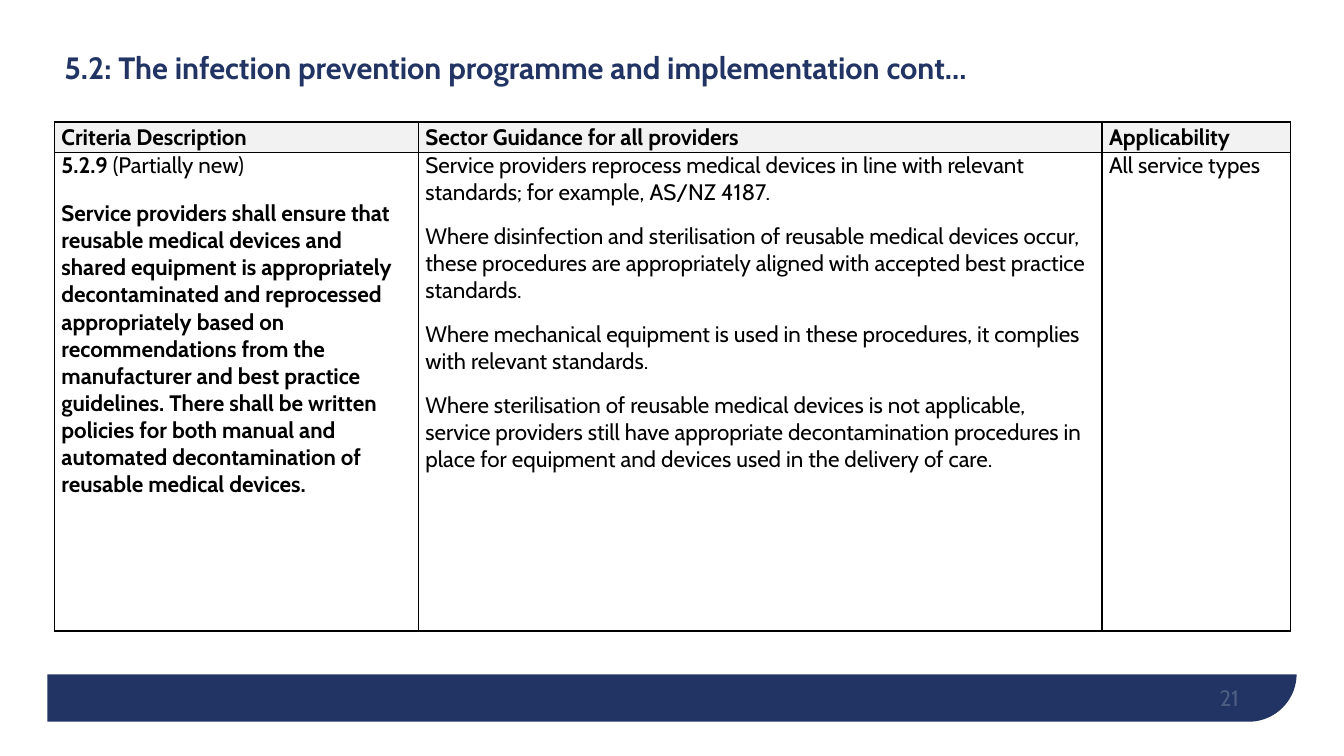
from dataclasses import dataclass

from lxml import etree
from pptx import Presentation
from pptx.dml.color import RGBColor
from pptx.enum.shapes import MSO_SHAPE
from pptx.enum.text import MSO_ANCHOR, PP_ALIGN
from pptx.oxml.ns import qn
from pptx.util import Pt

EMU_PER_PX = 9144  # 100 px to the inch
ROUND_CORNER = MSO_SHAPE.ROUND_1_RECTANGLE
RECTANGLE = MSO_SHAPE.RECTANGLE
TOP, MIDDLE, BOTTOM = MSO_ANCHOR.TOP, MSO_ANCHOR.MIDDLE, MSO_ANCHOR.BOTTOM
LEFT, RIGHT = PP_ALIGN.LEFT, PP_ALIGN.RIGHT


@dataclass(frozen=True)
class Theme:
    font: str = "Cabin"
    navy: str = "213463"
    white: str = "FFFFFF"
    black: str = "000000"
    header_fill: str = "F2F2F2"
    title_size: int = 22
    body_size: int = 16
    border_width: int = 1


@dataclass(frozen=True)
class Box:
    left: int
    top: int
    width: int
    height: int

    def emu(self) -> list[int]:
        return [px(n) for n in (self.left, self.top, self.width, self.height)]


@dataclass(frozen=True)
class Run:
    text: str
    bold: bool = False


@dataclass(frozen=True)
class Column:
    heading: str
    width: int
    paragraphs: list[list[Run]]
    space_after: int = 6


THEME = Theme()
TABLE = Box(54, 121, 1226, 505)
HEADER_HEIGHT = 30
CELL_INSET = 7
SPACE_BEFORE = 6

COLUMNS = [
    Column("Criteria Description", 361, [
        [Run("5.2.9 ", True), Run("(Partially new)")],
        [Run("Service providers shall ensure that reusable medical devices and shared "
             "equipment is appropriately decontaminated and reprocessed appropriately "
             "based on recommendations from the manufacturer and best practice "
             "guidelines. There shall be written policies for both manual and automated "
             "decontamination of reusable medical devices.", True)],
    ], space_after=9),
    Column("Sector Guidance for all providers", 678, [
        [Run("Service providers reprocess medical devices in line with relevant "
             "standards; for example, AS/NZ 4187.")],
        [Run("Where disinfection and sterilisation of reusable medical devices occur, "
             "these procedures are appropriately aligned with accepted best practice "
             "standards.")],
        [Run("Where mechanical equipment is used in these procedures, it complies with "
             "relevant standards.")],
        [Run("Where sterilisation of reusable medical devices is not applicable, service "
             "providers still have appropriate decontamination procedures in place for "
             "equipment and devices used in the delivery of care.")],
    ]),
    Column("Applicability", 187, [[Run("All service types")]]),
]


def px(length: int) -> int:
    return length * EMU_PER_PX


def set_font(font, size: int, color: str) -> None:
    font.name = THEME.font
    font.size = Pt(size)
    font.color.rgb = RGBColor.from_string(color)


def add_panel(slide, preset, box: Box, color: str):
    panel = slide.shapes.add_shape(preset, *box.emu())
    panel.shadow.inherit = False
    panel.fill.solid()
    panel.fill.fore_color.rgb = RGBColor.from_string(color)
    panel.line.fill.background()
    return panel


def add_footer_band(slide) -> None:
    """Navy sheet with a rounded lower right corner, white above the band."""
    sheet = add_panel(slide, ROUND_CORNER, Box(47, 37, 1239, 679), THEME.navy)
    sheet.adjustments[0] = 0.07
    sheet.rotation = 180
    sheet._element.spPr.find(qn("a:xfrm")).set("flipH", "1")
    add_panel(slide, RECTANGLE, Box(0, 0, 1333, 669), THEME.white)


def add_label(slide, box: Box, text: str, size: int, color: str, anchor, align):
    """Add a one-paragraph text box and return its text frame."""
    frame = slide.shapes.add_textbox(*box.emu()).text_frame
    frame.word_wrap = True
    frame.vertical_anchor = anchor
    paragraph = frame.paragraphs[0]
    paragraph.text = text
    paragraph.alignment = align
    set_font(paragraph.font, size, color)
    return frame


def add_title(slide) -> None:
    frame = add_label(slide, Box(54, 21, 1025, 95),
                      "5.2: The infection prevention programme and implementation cont…",
                      THEME.title_size, THEME.navy, MIDDLE, LEFT)
    frame.paragraphs[0].font.bold = True
    frame.paragraphs[0].line_spacing = 0.9


def add_page_number(slide) -> None:
    frame = add_label(slide, Box(929, 665, 300, 40), "21",
                      THEME.body_size, THEME.white, BOTTOM, RIGHT)
    frame.margin_left = frame.margin_right = frame.margin_top = frame.margin_bottom = 0
    for color in frame.paragraphs[0]._p.iter(qn("a:srgbClr")):
        etree.SubElement(color, qn("a:alpha"), val="20000")


def add_borders(cell) -> None:
    properties = cell._tc.get_or_add_tcPr()
    for side in ("lnL", "lnR", "lnT", "lnB"):
        line = etree.SubElement(properties, qn(f"a:{side}"), w=str(Pt(THEME.border_width)))
        fill = etree.SubElement(line, qn("a:solidFill"))
        etree.SubElement(fill, qn("a:srgbClr"), val=THEME.black)


def fill_cell(cell, paragraphs: list[list[Run]], anchor, space_after: int) -> None:
    cell.margin_left = cell.margin_right = px(CELL_INSET)
    cell.margin_top = cell.margin_bottom = 0
    cell.vertical_anchor = anchor
    add_borders(cell)
    frame = cell.text_frame
    for index, runs in enumerate(paragraphs):
        paragraph = frame.add_paragraph() if index else frame.paragraphs[0]
        if index:
            paragraph.space_before = Pt(SPACE_BEFORE)
        if index < len(paragraphs) - 1:
            paragraph.space_after = Pt(space_after)
        set_font(paragraph.font, THEME.body_size, THEME.black)
        same_weight = len({run.bold for run in runs}) == 1
        if same_weight:
            paragraph.font.bold = runs[0].bold
        for run in runs:
            piece = paragraph.add_run()
            piece.text = run.text
            if not same_weight:
                piece.font.bold = run.bold


def add_criteria_table(slide) -> None:
    table = slide.shapes.add_table(2, len(COLUMNS), *TABLE.emu()).table
    table.first_row = table.horz_banding = False
    table.rows[0].height = px(HEADER_HEIGHT)
    table.rows[1].height = px(TABLE.height - HEADER_HEIGHT)
    for index, column in enumerate(COLUMNS):
        table.columns[index].width = px(column.width)
        heading, body = table.cell(0, index), table.cell(1, index)
        fill_cell(heading, [[Run(column.heading, True)]], MIDDLE, column.space_after)
        heading.fill.solid()
        heading.fill.fore_color.rgb = RGBColor.from_string(THEME.header_fill)
        fill_cell(body, column.paragraphs, TOP, column.space_after)
        body.fill.background()


def main() -> None:
    presentation = Presentation()
    presentation.slide_width, presentation.slide_height = px(1333), px(750)
    slide = presentation.slides.add_slide(presentation.slide_layouts[6])
    add_footer_band(slide)
    add_page_number(slide)
    add_title(slide)
    add_criteria_table(slide)
    presentation.save("out.pptx")


if __name__ == "__main__":
    main()
